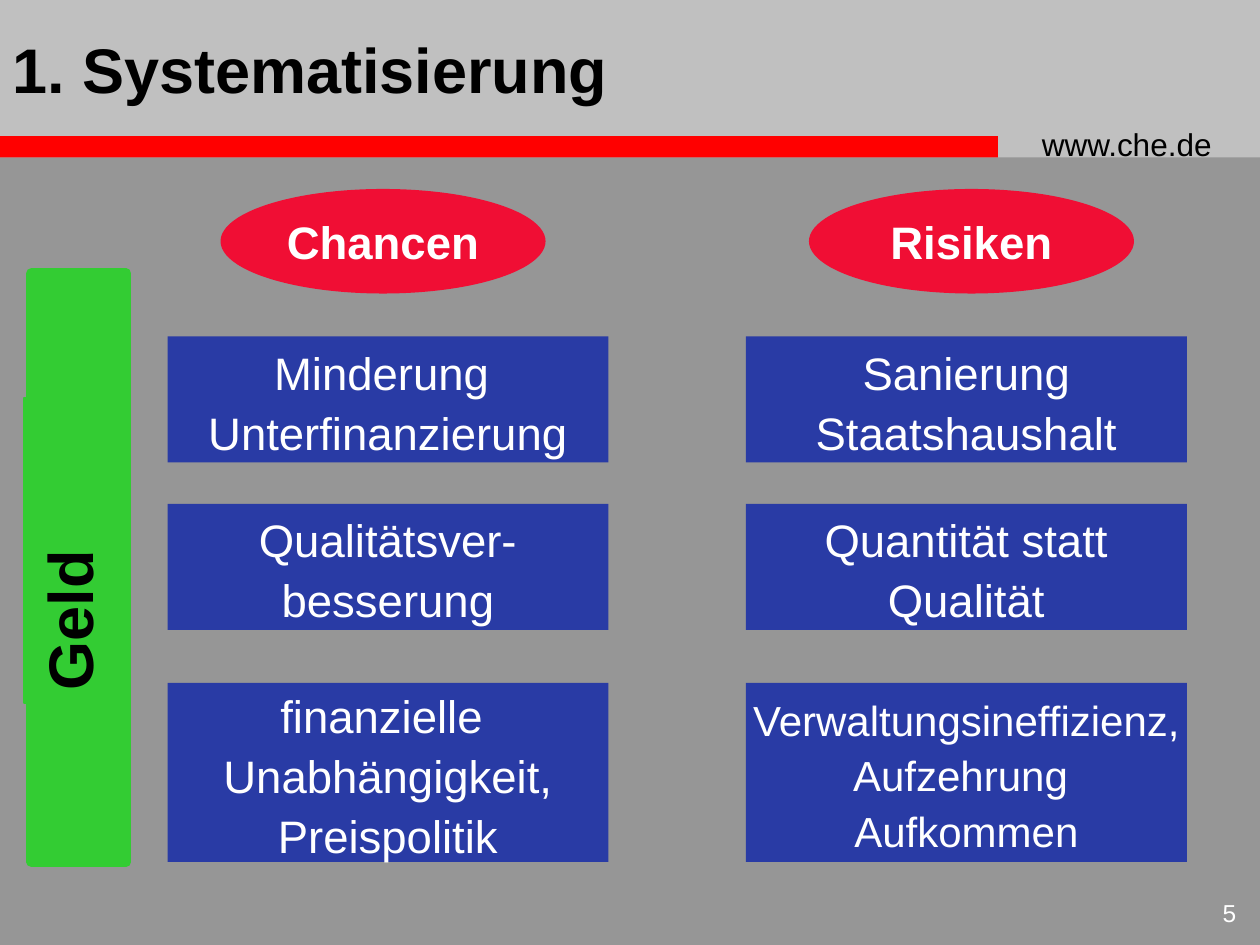
"""Build the slide on the financial chances and risks."""
from pptx import Presentation
from pptx.dml.color import RGBColor
from pptx.enum.shapes import MSO_SHAPE
from pptx.enum.text import MSO_ANCHOR, PP_ALIGN
from pptx.util import Inches, Pt

COLORS = {
    "background": "969696", "header": "C0C0C0", "bar": "FF0000",
    "green": "33CC33", "red": "F00E34", "blue": "293BA5",
    "black": "000000", "white": "FFFFFF",
}


def add_block(kind, bounds, color, line_width=0):
    shape = slide.shapes.add_shape(kind, *map(Inches, bounds))
    shape.shadow.inherit = False
    shape.fill.solid()
    shape.fill.fore_color.rgb = RGBColor.from_string(COLORS[color])
    if line_width:
        shape.line.color.rgb = RGBColor.from_string(COLORS[color])
        shape.line.width = Pt(line_width)
    else:
        shape.line.fill.background()
    return shape


def write(shape, lines, size, color, bold=False, align=PP_ALIGN.LEFT,
          anchor=MSO_ANCHOR.MIDDLE, wrap=True, spacing=1.0):
    frame = shape.text_frame
    frame.word_wrap = wrap
    frame.vertical_anchor = anchor
    frame.text = "\n".join(lines)
    font_format = {"name": "Arial", "size": Pt(size), "bold": bold}
    for paragraph in frame.paragraphs:
        paragraph.alignment = align
        paragraph.line_spacing = spacing
        for run in paragraph.runs:
            for attribute, value in font_format.items():
                setattr(run.font, attribute, value)
            run.font.color.rgb = RGBColor.from_string(COLORS[color])


presentation = Presentation()
presentation.slide_width = Inches(10)
presentation.slide_height = Inches(7.5)
slide = presentation.slides.add_slide(presentation.slide_layouts[6])
slide.background.fill.solid()
slide.background.fill.fore_color.rgb = RGBColor.from_string(COLORS["background"])

add_block(MSO_SHAPE.RECTANGLE, (0, 0, 10, 1.25), "header")
add_block(MSO_SHAPE.RECTANGLE, (-0.01, 1.08, 7.93, 0.17), "bar")

labels = [
    ((8.17, 0.94, 1.75, 0.4), "www.che.de",
     {"size": 18, "color": "black", "anchor": MSO_ANCHOR.TOP}),
    ((9.33, 7.08, 0.58, 0.42), "5",
     {"size": 14, "color": "white", "anchor": MSO_ANCHOR.TOP, "align": PP_ALIGN.RIGHT}),
    ((0, 0, 8.08, 1.08), "1. Systematisierung",
     {"size": 36, "color": "black", "bold": True}),
]
for bounds, text, text_format in labels:
    text_box = slide.shapes.add_textbox(*map(Inches, bounds))
    write(text_box, [text], **text_format)

add_block(MSO_SHAPE.RECTANGLE, (0.25, 2.17, 0.75, 4.67), "green", 6)
money = add_block(MSO_SHAPE.RECTANGLE, (0.19, 3.16, 0.81, 2.42), "green", 0.75)
write(money, ["Geld"], 36, "black", bold=True, anchor=MSO_ANCHOR.TOP)
for side in ("left", "top", "right", "bottom"):
    setattr(money.text_frame, f"margin_{side}", Inches(0.1))
money.text_frame._txBody.bodyPr.set("vert", "vert270")

rows = [(2.67, 1), (4, 1), (5.42, 1.42)]
columns = [
    ("Chancen", 1.75, 1.33, [
        (["Minderung ", "Unterfinanzierung"], 26),
        (["Qualitätsver-", "besserung"], 26),
        (["finanzielle ", "Unabhängigkeit,", "Preispolitik"], 26),
    ]),
    ("Risiken", 6.42, 5.92, [
        (["Sanierung", "Staatshaushalt"], 26),
        (["Quantität statt", "Qualität"], 26),
        (["Verwaltungsineffizienz,", "Aufzehrung ", "Aufkommen"], 24),
    ]),
]
centered = {"color": "white", "align": PP_ALIGN.CENTER, "wrap": False}
for heading, heading_left, box_left, boxes in columns:
    ellipse = add_block(MSO_SHAPE.OVAL, (heading_left, 1.5, 2.58, 0.83), "red")
    write(ellipse, [heading], 26, bold=True, **centered)
    for (top, height), (lines, size) in zip(rows, boxes):
        box = add_block(MSO_SHAPE.RECTANGLE, (box_left, top, 3.5, height), "blue")
        write(box, lines, size, spacing=1.1, **centered)

presentation.save("out.pptx")
